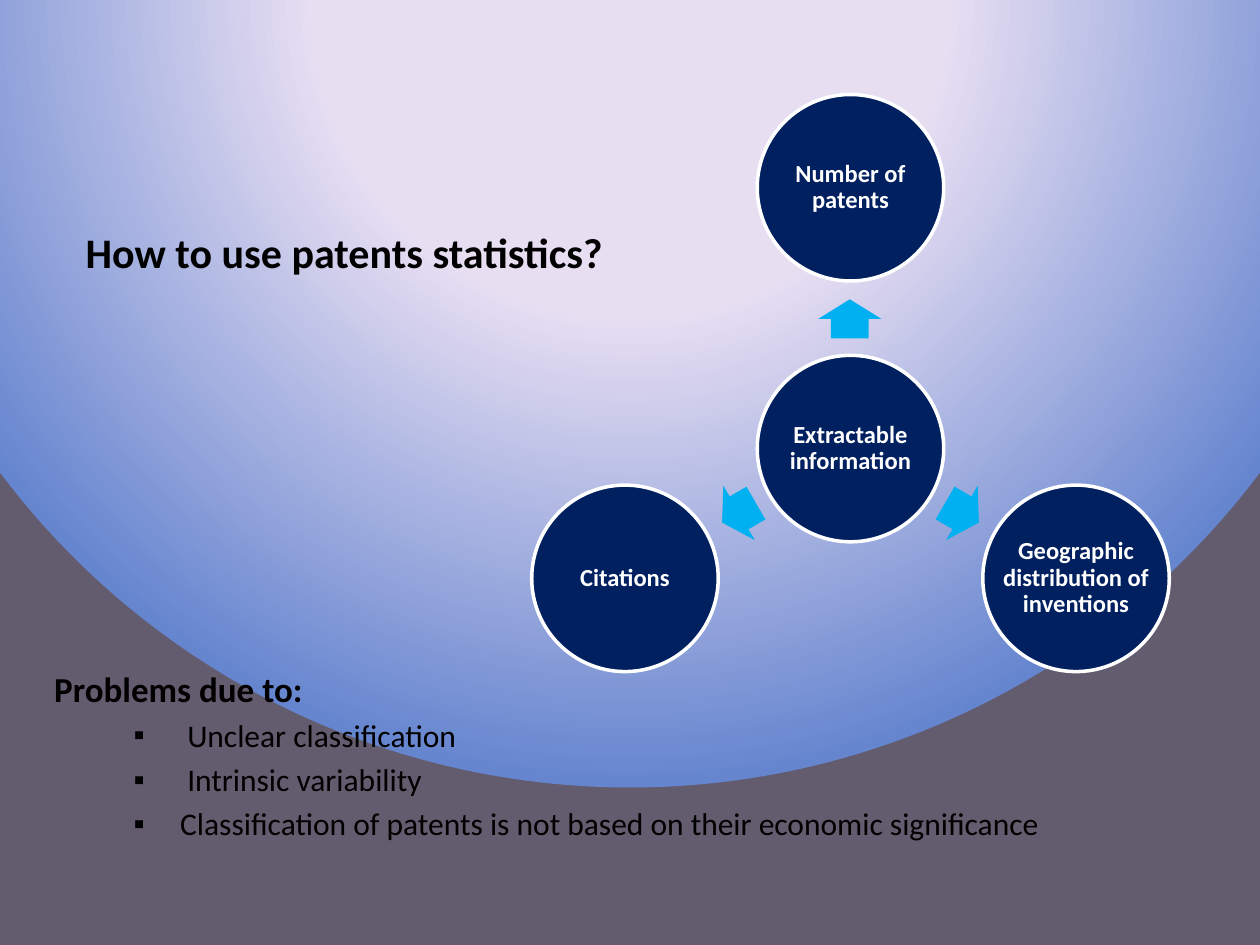
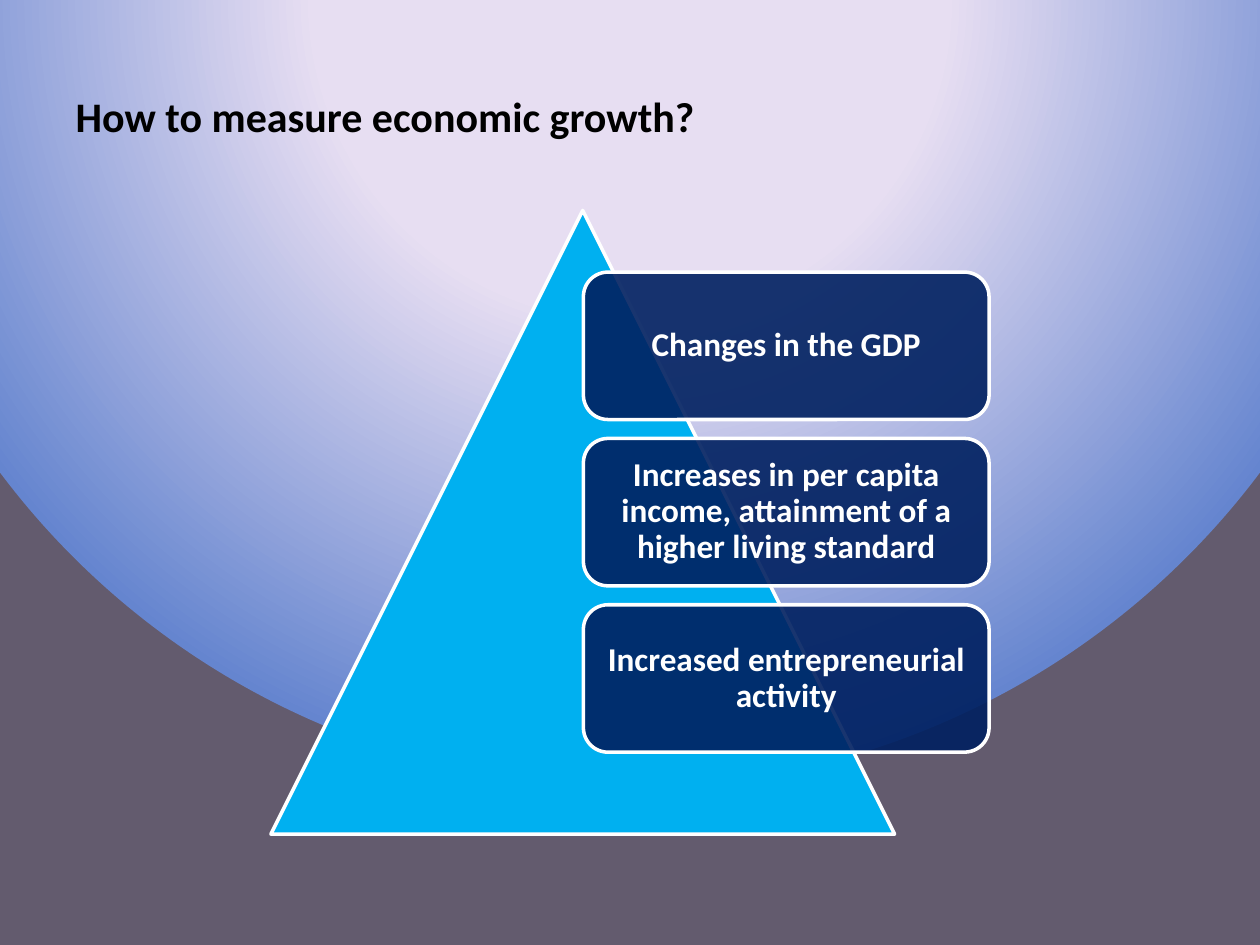
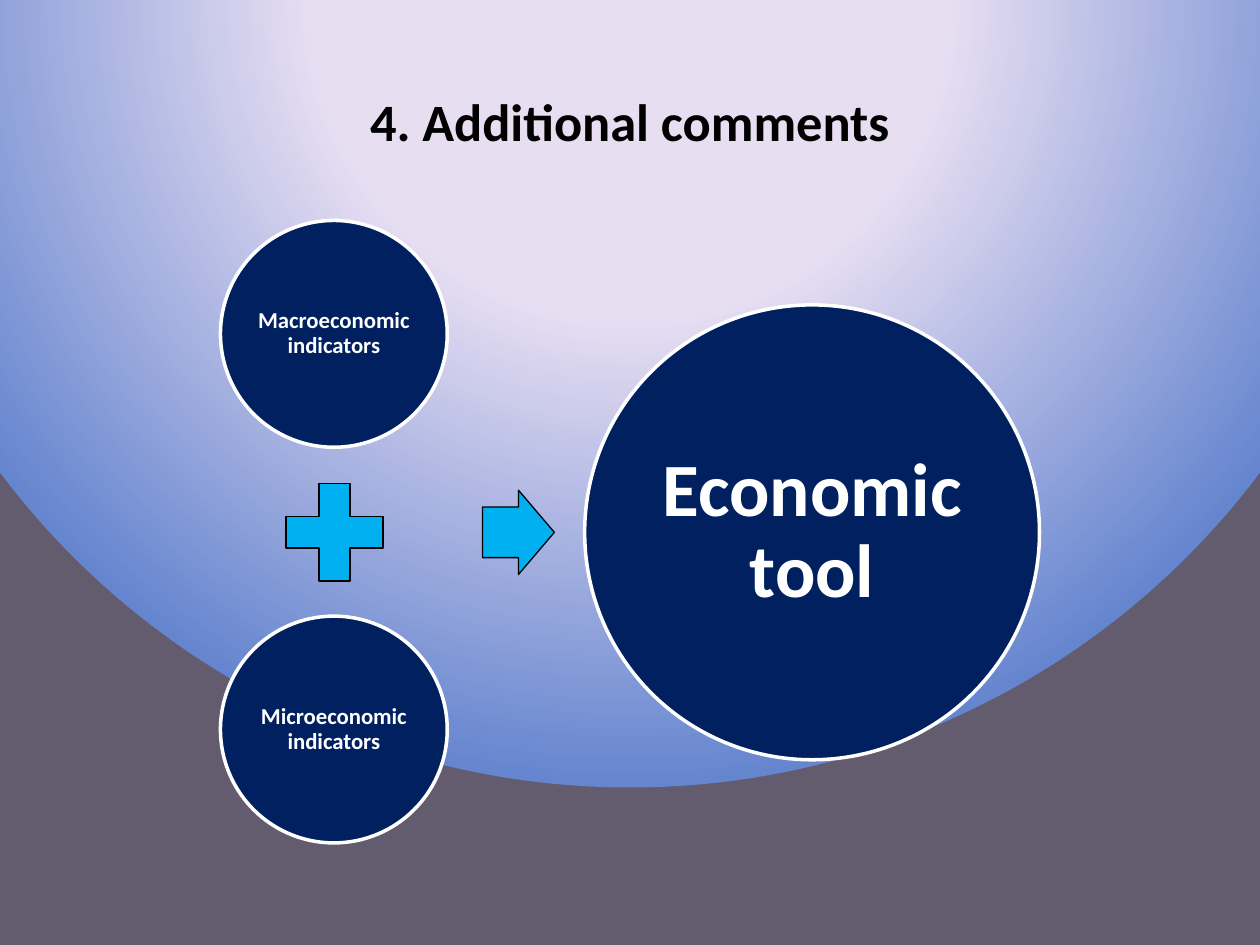
"""Build three slides on patent statistics and economic growth."""
from lxml import etree
from pptx import Presentation
from pptx import util as u
from pptx.dml.color import RGBColor
from pptx.enum import shapes, text
from pptx.oxml.ns import qn

PX = u.Inches(1) // 100
FONT = "Calibri"
NAVY = RGBColor(0x00, 0x20, 0x60)
SKY = RGBColor(0x00, 0xB0, 0xF0)
WHITE = RGBColor(0xFF, 0xFF, 0xFF)
BLACK = RGBColor(0x00, 0x00, 0x00)
PALE = RGBColor(0xE7, 0xDE, 0xF2)
BLUE = RGBColor(0x65, 0x85, 0xCF)
GREY = RGBColor(0x63, 0x5B, 0x6E)
KIND = shapes.MSO_SHAPE
ALIGN = text.PP_ALIGN
ANCHOR = text.MSO_ANCHOR


def put(slide, kind, box, fill, edge=None, label="", size=14, pad=2):
    """Add a filled shape, with a label if one is given."""
    shape = slide.shapes.add_shape(kind, *[n * PX for n in box])
    shape.shadow.inherit = False
    shape.fill.solid()
    shape.fill.fore_color.rgb = fill
    if edge is None:
        shape.line.fill.background()
    else:
        shape.line.color.rgb = edge
        shape.line.width = u.Pt(2 if edge == WHITE else 0.75)
    if kind == KIND.RIGHT_ARROW:
        shape.adjustments[0], shape.adjustments[1] = 0.6, 0.5
    if label:
        frame = shape.text_frame
        frame.text = label
        frame.word_wrap = "\v" not in label
        frame.vertical_anchor = ANCHOR.MIDDLE
        frame.margin_left = frame.margin_right = pad * PX
        frame.margin_top = frame.margin_bottom = pad * PX
        para = frame.paragraphs[0]
        para.alignment = ALIGN.CENTER
        para.line_spacing = 0.9
        style(para, size, WHITE)
    return shape


def style(para, size, color=BLACK, bold=True):
    """Set the font of a paragraph."""
    font = para.font
    font.name, font.size, font.bold = FONT, u.Pt(size), bold
    font.color.rgb = color


prs = Presentation()
prs.slide_width, prs.slide_height = 1000 * PX, 750 * PX

master = prs.slide_master
master.background.fill.gradient()
grad = master.element.find(".//" + qn("p:bg")).find(".//" + qn("a:gradFill"))
for child in list(grad):
    grad.remove(child)
stops = etree.SubElement(grad, qn("a:gsLst"))
for pos, color in ((40, PALE), (100, BLUE), (100, GREY)):
    stop = etree.SubElement(stops, qn("a:gs"), pos=str(pos * 1000))
    etree.SubElement(stop, qn("a:srgbClr"), val=str(color))
path = etree.SubElement(grad, qn("a:path"))
path.set("path", "circle")
etree.SubElement(path, qn("a:fillToRect"), l="50000", t="-80000", r="50000", b="180000")

heads = (
    (1, "How to use patents statistics?", (58, 175, 458, 58), 24, ALIGN.LEFT, ANCHOR.TOP),
    (5, "How to measure economic growth?", (50, 67, 575, 92), 24, ALIGN.LEFT, ANCHOR.TOP),
    (5, "4. Additional comments", (50, 33, 900, 125), 30, ALIGN.CENTER, ANCHOR.MIDDLE),
)
slides = []
for layout, words, box, size, align, anchor in heads:
    slide = prs.slides.add_slide(prs.slide_layouts[layout])
    title = slide.shapes.title
    title.left, title.top, title.width, title.height = [n * PX for n in box]
    frame = title.text_frame
    frame.text = words
    frame.auto_size = text.MSO_AUTO_SIZE.NONE
    frame.word_wrap = True
    frame.vertical_anchor = anchor
    frame.paragraphs[0].alignment = align
    style(frame.paragraphs[0], size)
    slides.append(slide)
use, growth, notes = slides

for left, top, label in (
    (601, 282, "Extractable information"),
    (601, 75, "Number of patents"),
    (780, 385, "Geographic\vdistribution of\vinventions"),
    (422, 385, "Citations"),
):
    put(use, KIND.OVAL, (left, top, 148, 148), NAVY, WHITE, label)
for left, top, turn in ((659, 228, 270), (748, 382, 30), (571, 382, 150)):
    put(use, KIND.RIGHT_ARROW, (left, top, 31, 50), SKY).rotation = turn

body = use.placeholders[1]
body.left, body.top, body.width, body.height = [n * PX for n in (33, 525, 900, 183)]
frame = body.text_frame
frame.auto_size = text.MSO_AUTO_SIZE.NONE
lines = (
    "Problems due to:",
    " Unclear classification",
    " Intrinsic variability",
    "Classification of patents is not based on their economic significance",
)
for i, line in enumerate(lines):
    para = frame.add_paragraph() if i else frame.paragraphs[0]
    para.text = line
    para.level = 1
    style(para, 18 if i else 20, bold=not i)
    props = para._p.get_or_add_pPr()
    props.set("marL", str(100 * PX if i else 0))
    props.set("indent", str(-37 * PX if i else 0))
    if i:
        etree.SubElement(props, qn("a:buChar"), char="▪")
    else:
        etree.SubElement(props, qn("a:buNone"))
    mark = props.find(qn("a:defRPr"))
    if mark is not None:
        props.append(mark)

put(growth, KIND.ISOSCELES_TRIANGLE, (215, 167, 495, 495), SKY, WHITE)
for i, label in enumerate((
    "Changes in the GDP",
    "Increases in per capita income, attainment of a higher living standard",
    "Increased entrepreneurial activity",
)):
    card = put(growth, KIND.ROUNDED_RECTANGLE, (463, 216 + 132 * i, 322, 117),
               NAVY, WHITE, label, 19, 8)
    tint = card.fill._xPr.find(qn("a:solidFill"))[0]
    etree.SubElement(tint, qn("a:alpha"), val="90000")

put(notes, KIND.OVAL, (175, 175, 180, 180), NAVY, WHITE, "Macroeconomic indicators", 13)
put(notes, KIND.MATH_PLUS, (213, 370, 105, 105), SKY, BLACK)
put(notes, KIND.OVAL, (175, 489, 180, 180), NAVY, WHITE, "Microeconomic indicators", 13)
put(notes, KIND.RIGHT_ARROW, (383, 389, 57, 67), SKY, BLACK)
put(notes, KIND.OVAL, (464, 242, 361, 361), NAVY, WHITE, "Economic tool", 43, 6)

prs.save("out.pptx")
